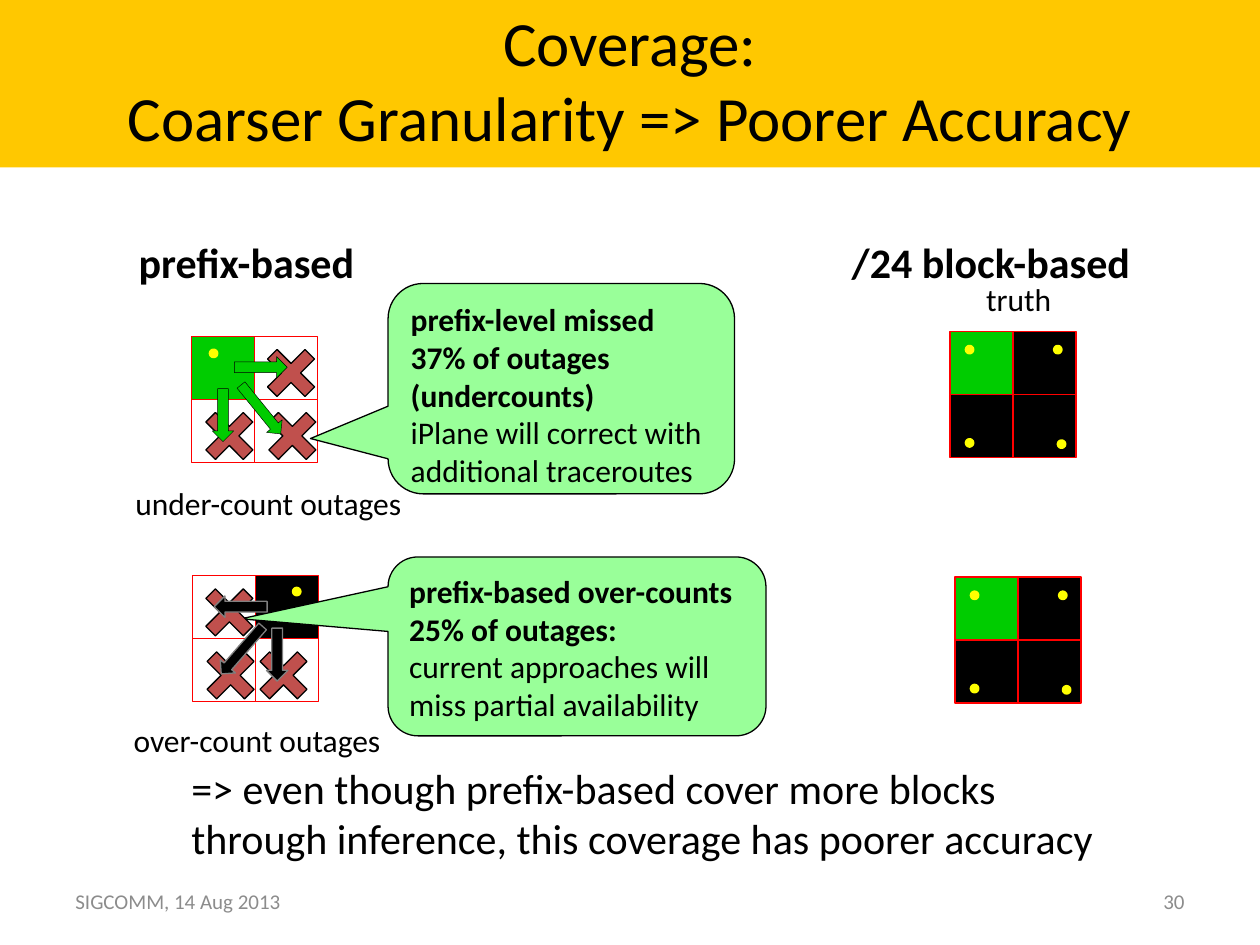
"""Build the slide comparing prefix-based and block-based outage coverage."""
import pptx
import pptx.dml.color
import pptx.enum.shapes
import pptx.enum.text
import pptx.oxml.ns
import pptx.util
from dataclasses import dataclass
from lxml import etree

Inches = pptx.util.Inches
Pt = pptx.util.Pt
SHAPE = pptx.enum.shapes.MSO_SHAPE
ALIGN = pptx.enum.text.PP_ALIGN
ANCHOR = pptx.enum.text.MSO_ANCHOR


@dataclass(frozen=True)
class Theme:
    font: str = "Calibri"
    title_size: int = 36
    large_size: int = 24
    text_size: int = 18
    footer_size: int = 12
    band: str = "FFC800"
    ink: str = "000000"
    footer: str = "8C8C8C"
    up: str = "00CC00"
    down: str = "000000"
    unknown: str = "FFFFFF"
    grid_line: str = "FF0000"
    cross: str = "C0504D"
    callout: str = "99FF99"
    dot: str = "FFFF00"
    down_arrow_line: str = "808080"


THEME = Theme()
CELL, CROSS, DOT = 0.5, 0.42, 0.05

TITLE = "Coverage:\vCoarser Granularity => Poorer Accuracy"
HEADINGS = [("prefix-based", (1, 1.83, 4.42, 0.7)), ("/24 block-based", (6.66, 1.83, 2.5, 0.7))]

LABELS = [
    ("truth", (7.42, 2.17, 1.33, 0.4)),
    ("under-count outages", (0.92, 3.79, 2.42, 0.4)),
    ("over-count outages", (0.83, 5.67, 2.42, 0.4)),
]
CONCLUSION = (
    "=> even though prefix-based cover more blocks through inference, "
    "this coverage has poorer accuracy"
)
FOOTERS = [
    ("SIGCOMM, 14 Aug 2013", (0.5, 6.95, 2.33, 0.4), ALIGN.LEFT),
    ("30", (7.17, 6.95, 2.33, 0.4), ALIGN.RIGHT),
]
CALLOUTS = [
    ("prefix-level missed 37% of outages (undercounts)",
     "iPlane will correct with additional traceroutes",
     (3.08, 2.25, 2.75, 1.67), (-0.724, 0.237, 0.167)),
    ("prefix-based over-counts 25% of outages:",
     "current approaches will miss partial availability",
     (3.08, 4.42, 3, 1.42), (-0.889, -0.154, 0.167)),
]
TRUTH_CELLS = [["up", "down"], ["down", "down"]]
TRUTH_DOTS = [(0.13, 0.12), (0.83, 0.12), (0.13, 0.86), (0.86, 0.87)]
GRIDS = [
    {"at": (1.52, 2.67), "cells": [["up", "unknown"], ["unknown", "unknown"]],
     "dots": [(0.15, 0.11)],
     "crosses": [(0.58, 0.08), (0.59, 0.58), (0.09, 0.58)],
     "arrows": [(0.34, 0.16, 0.42, 0.17, 0), (0.04, 0.54, 0.42, 0.17, 90),
                (0.3, 0.5, 0.5, 0.16, 50.9)],
     "arrow_style": (THEME.up, THEME.ink, 0.25)},
    {"at": (1.53, 4.57), "cells": [["unknown", "down"], ["unknown", "unknown"]],
     "dots": [(0.8, 0.1)],
     "crosses": [(0.08, 0.08), (0.09, 0.58), (0.51, 0.58)],
     "arrows": [(0.17, 0.16, 0.42, 0.17, 180), (0.46, 0.54, 0.42, 0.17, 90),
                (0.14, 0.51, 0.5, 0.16, 131.1)],
     "arrow_style": (THEME.down, THEME.down_arrow_line, 0.75)},
    {"at": (7.54, 2.63), "cells": TRUTH_CELLS, "dots": TRUTH_DOTS},
    {"at": (7.58, 4.58), "cells": TRUTH_CELLS, "dots": TRUTH_DOTS},
]


def color(value):
    return pptx.dml.color.RGBColor.from_string(value)


def add_shape(slide, kind, place, fill, line=None, width=0.75, rotation=0, adjust=()):
    shape = slide.shapes.add_shape(kind, *map(Inches, place))
    shape.shadow.inherit = False
    shape.fill.solid()
    shape.fill.fore_color.rgb = color(fill)
    if line:
        shape.line.color.rgb = color(line)
        shape.line.width = Pt(width)
    else:
        shape.line.fill.background()
    shape.rotation = rotation
    for index, value in enumerate(adjust):
        shape.adjustments[index] = value
    return shape


def write(frame, lines, size, ink=THEME.ink, align=ALIGN.LEFT, anchor=ANCHOR.TOP):
    """Fill a text frame with (text, bold) lines."""
    frame.word_wrap = True
    frame.auto_size = pptx.enum.text.MSO_AUTO_SIZE.NONE
    frame.vertical_anchor = anchor
    for index, (text, bold) in enumerate(lines):
        para = frame.add_paragraph() if index else frame.paragraphs[0]
        para.text = text
        para.alignment = align
        para.space_before = Pt(0)
        para.font.name = THEME.font
        para.font.size = Pt(size)
        para.font.bold = bold
        para.font.color.rgb = color(ink)


def add_text(slide, text, place, size, **style):
    box = slide.shapes.add_textbox(*map(Inches, place))
    write(box.text_frame, [(text, False)], size, **style)


def fill_placeholder(holder, text, place, size, bold, **style):
    holder.left, holder.top, holder.width, holder.height = map(Inches, place)
    properties = holder.text_frame.paragraphs[0]._p.get_or_add_pPr()
    etree.SubElement(properties, pptx.oxml.ns.qn("a:buNone"))
    write(holder.text_frame, [(text, bold)], size, **style)


def add_cells(slide, grid):
    left, top = grid["at"]
    for row, states in enumerate(grid["cells"]):
        for column, state in enumerate(states):
            place = (left + column * CELL, top + row * CELL, CELL, CELL)
            add_shape(slide, SHAPE.RECTANGLE, place, getattr(THEME, state), THEME.grid_line)


def add_marks(slide, grid):
    left, top = grid["at"]
    for x, y in grid.get("crosses", []):
        add_shape(slide, SHAPE.CROSS, (left + x, top + y, CROSS, CROSS),
                  THEME.cross, THEME.ink, rotation=45, adjust=(0.373,))
    for x, y, width, height, angle in grid.get("arrows", []):
        add_shape(slide, SHAPE.RIGHT_ARROW, (left + x, top + y, width, height),
                  *grid["arrow_style"], rotation=angle)
    for x, y in grid["dots"]:
        add_shape(slide, SHAPE.OVAL, (left + x, top + y, DOT, DOT), THEME.dot, THEME.dot, 2)


def main():
    deck = pptx.Presentation()
    deck.slide_width, deck.slide_height = Inches(10), Inches(7.5)
    slide = deck.slides.add_slide(deck.slide_layouts.get_by_name("Two Content"))

    band = add_shape(slide, SHAPE.RECTANGLE, (0, 0, 10, 1.33), THEME.band)
    slide.shapes.title._element.addprevious(band._element)
    fill_placeholder(slide.shapes.title, TITLE, (0.5, 0, 9, 1.25), THEME.title_size, False,
                     align=ALIGN.CENTER, anchor=ANCHOR.MIDDLE)
    for index, (text, place) in enumerate(HEADINGS, start=1):
        fill_placeholder(slide.placeholders[index], text, place, THEME.large_size, True)

    for grid in GRIDS:
        add_cells(slide, grid)
    for strong, plain, place, adjust in CALLOUTS:
        callout = add_shape(slide, SHAPE.ROUNDED_RECTANGULAR_CALLOUT, place,
                            THEME.callout, THEME.ink, adjust=adjust)
        write(callout.text_frame, [(strong, True), (plain, False)], THEME.text_size)
    for grid in GRIDS:
        add_marks(slide, grid)

    for text, place in LABELS:
        add_text(slide, text, place, THEME.text_size, align=ALIGN.CENTER)
    add_text(slide, CONCLUSION, (1.42, 6, 7.58, 0.91), THEME.large_size)
    for text, place, align in FOOTERS:
        add_text(slide, text, place, THEME.footer_size, ink=THEME.footer,
                 align=align, anchor=ANCHOR.MIDDLE)
    deck.save("out.pptx")


if __name__ == "__main__":
    main()
